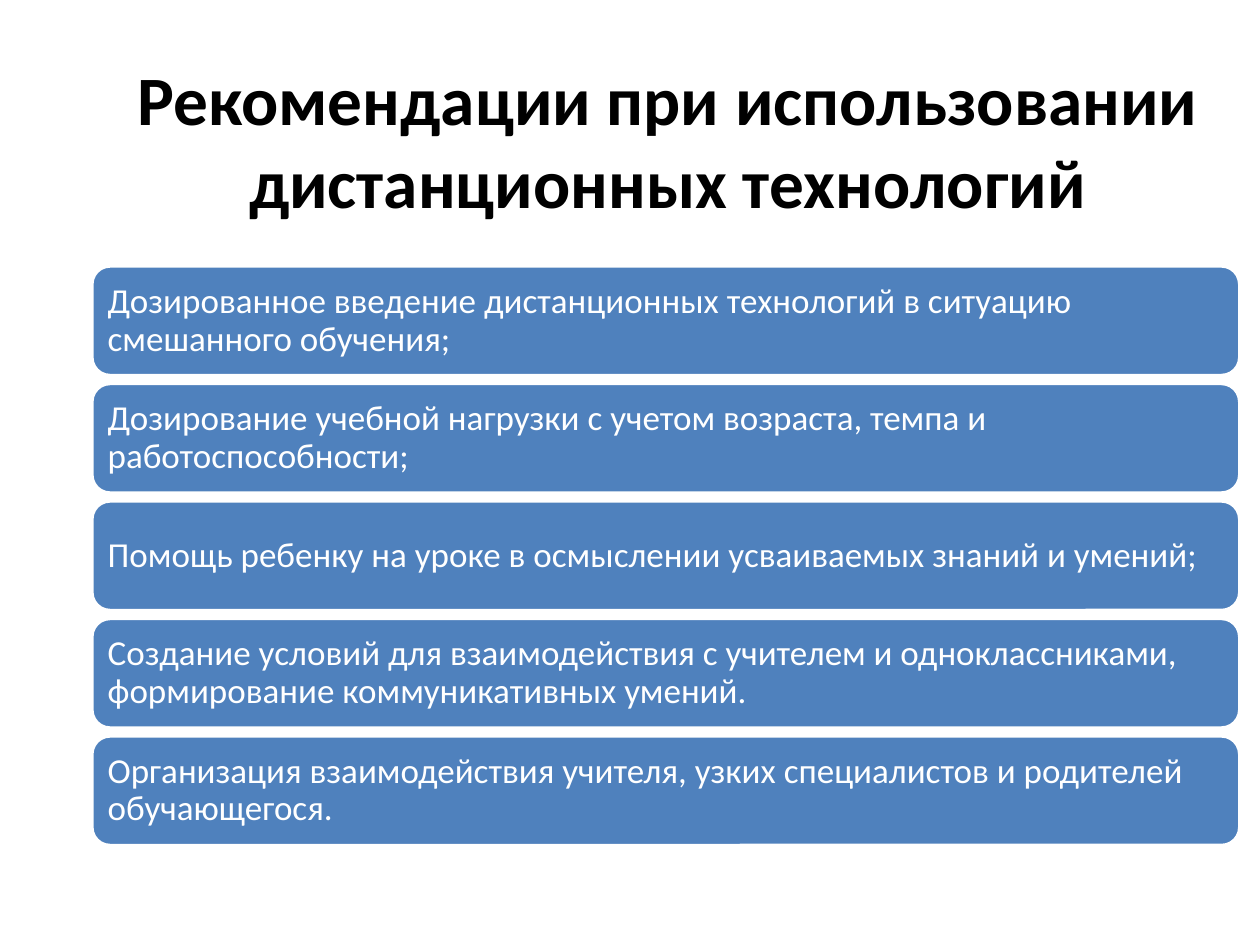
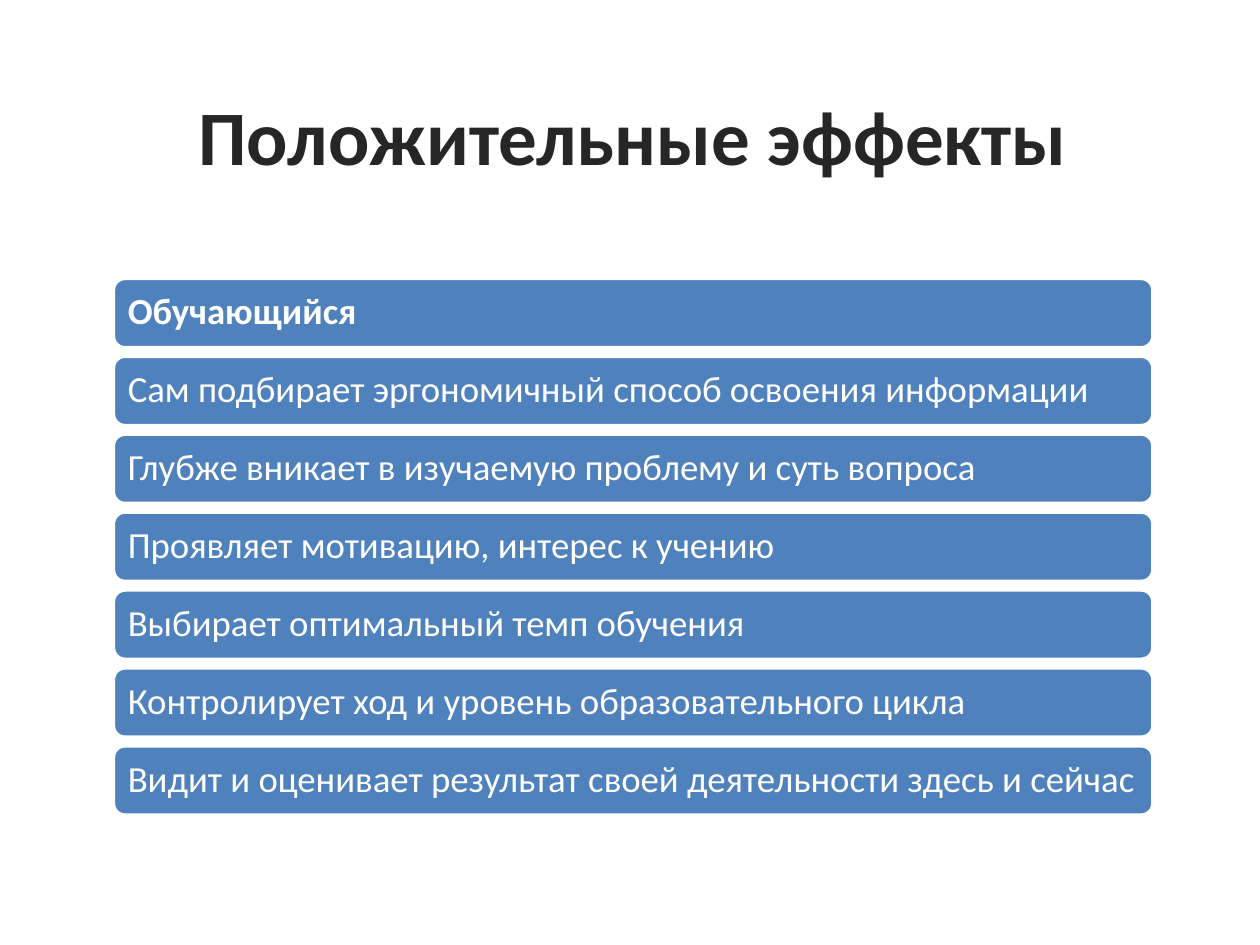
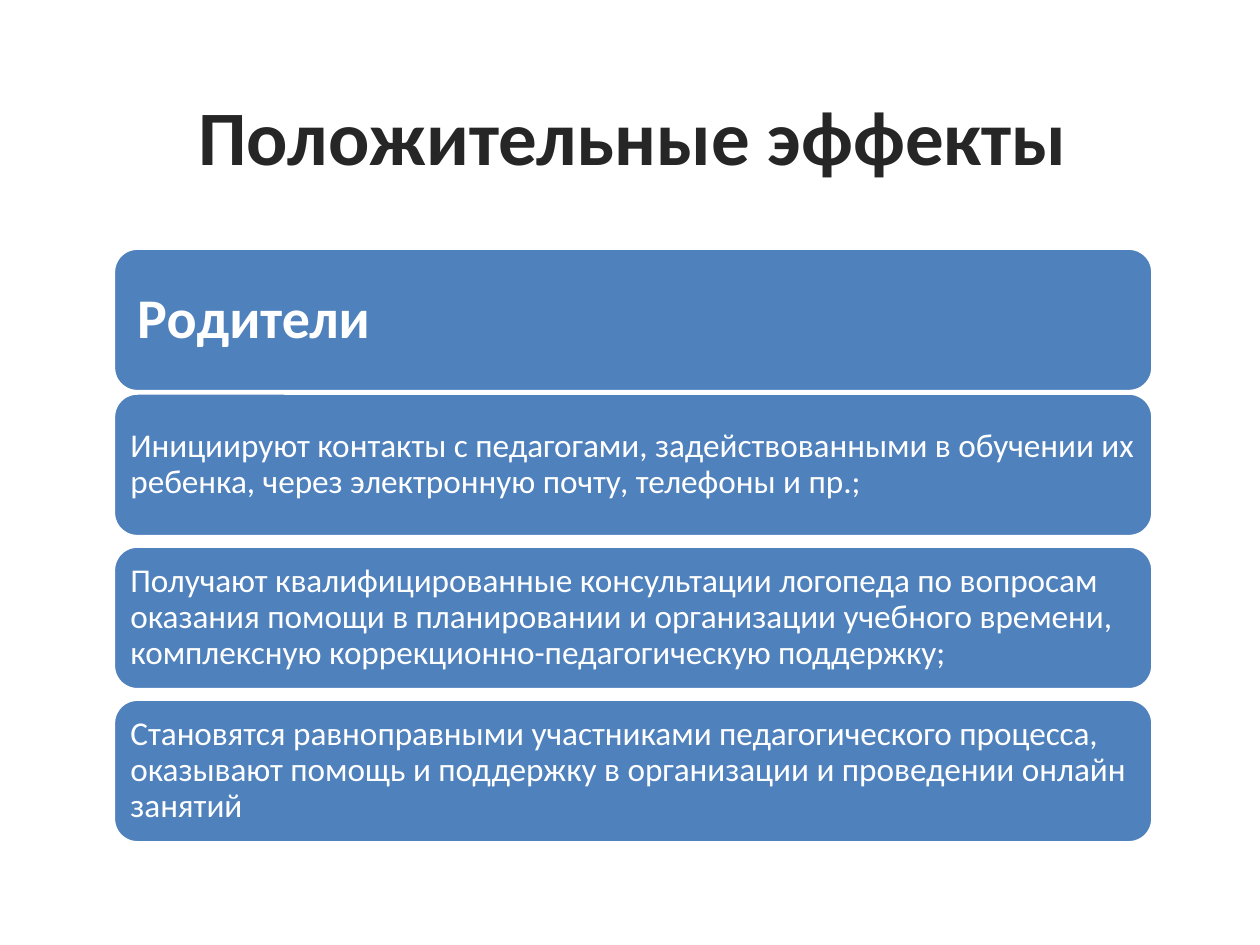
from dataclasses import dataclass

from pptx import Presentation
from pptx.dml.color import RGBColor as Rgb
from pptx.enum import shapes as sh, text as tx
from pptx.util import Pt


@dataclass(frozen=True)
class Theme:
    """Colours, font and type sizes of the deck."""
    font: str = "Calibri"
    black: str = "000000"
    dark: str = "262626"
    white: str = "FFFFFF"
    blue: str = "4F81BD"
    edge: float = 2
    lead: float = 0.9
    pad: float = 0.3
    long: float = 39.6
    head: float = 44
    group: float = 32
    tip: float = 20
    gain: float = 21
    role: float = 19


T = Theme()
TOP = (64.8, 19.5, 594, 114.5)

TIPS = [
    "Дозированное введение дистанционных технологий в ситуацию смешанного обучения;",
    "Дозирование учебной нагрузки с учетом возраста, темпа и работоспособности;",
    "Помощь ребенку на уроке в осмыслении усваиваемых знаний и умений;",
    "Создание условий для взаимодействия с учителем и одноклассниками, "
    "формирование коммуникативных умений.",
    "Организация взаимодействия учителя, узких специалистов и родителей обучающегося.",
]
PUPIL = [
    "Обучающийся",
    "Сам подбирает эргономичный способ освоения информации",
    "Глубже вникает в изучаемую проблему и суть вопроса",
    "Проявляет мотивацию, интерес к учению",
    "Выбирает оптимальный темп обучения",
    "Контролирует ход и уровень образовательного цикла",
    "Видит и оценивает результат своей деятельности здесь и сейчас",
]
HOME = [
    "Инициируют контакты с педагогами, задействованными в обучении их ребенка, "
    "через электронную почту, телефоны и пр.;",
    "Получают квалифицированные консультации логопеда по вопросам оказания помощи "
    "в планировании и организации учебного времени, "
    "комплексную коррекционно-педагогическую поддержку;",
    "Становятся равноправными участниками педагогического процесса, оказывают помощь "
    "и поддержку в организации и проведении онлайн занятий",
]


def style(frame, words, size, color, align, bold=False):
    """Fill a text frame with one formatted paragraph."""
    frame.text = words
    frame.word_wrap = True
    frame.auto_size = tx.MSO_AUTO_SIZE.NONE
    frame.vertical_anchor = tx.MSO_ANCHOR.MIDDLE
    para = frame.paragraphs[0]
    para.alignment = align
    for run in para.runs:
        run.font.name = T.font
        run.font.size = Pt(size)
        run.font.bold = bold
        run.font.color.rgb = Rgb.from_string(color)


def start(deck, words, box=TOP, size=T.head, color=T.dark):
    """Add a slide with its title placed in the box."""
    slide = deck.slides.add_slide(deck.slide_layouts[5])
    title = slide.shapes.title
    title.left, title.top, title.width, title.height = map(Pt, box)
    style(title.text_frame, words, size, color, tx.PP_ALIGN.CENTER, True)
    return slide


def bar(slide, box, words, size, bold=False):
    """Draw one rounded bar with left-aligned text."""
    shape = slide.shapes.add_shape(sh.MSO_SHAPE.ROUNDED_RECTANGLE, *map(Pt, box))
    shape.shadow.inherit = False
    shape.fill.solid()
    shape.fill.fore_color.rgb = Rgb.from_string(T.blue)
    shape.line.color.rgb = Rgb.from_string(T.white)
    shape.line.width = Pt(T.edge)
    frame = shape.text_frame
    style(frame, words, size, T.white, tx.PP_ALIGN.LEFT, bold)
    frame.paragraphs[0].line_spacing = T.lead
    inset = Pt(size * T.pad)
    frame.margin_left = frame.margin_right = inset
    frame.margin_top = frame.margin_bottom = inset


def stack(slide, box, items, size, gap, lead=False):
    """Share the box among equal bars; lead makes the first one bold."""
    left, top, width, height = box
    tall = (height - gap * (len(items) - 1)) / len(items)
    for i, words in enumerate(items):
        spot = (left, top + i * (tall + gap), width, tall)
        bar(slide, spot, words, size, lead and i == 0)


def main():
    """Build the three slides and save the deck."""
    deck = Presentation()
    deck.slide_width, deck.slide_height = Pt(720), Pt(540)

    slide = start(deck, "Рекомендации при использовании дистанционных технологий",
                  (64.8, 22.3, 633.6, 114.5), T.long, T.black)
    stack(slide, (52.5, 152, 656, 331.2), TIPS, T.tip, 4.5)

    effect = "Положительные эффекты"
    slide = start(deck, effect)
    stack(slide, (64.8, 159.1, 594, 306.7), PUPIL, T.gain, 4.9, True)

    slide = start(deck, effect)
    bar(slide, (64.8, 141.8, 594, 82), "Родители", T.group, True)
    stack(slide, (64.8, 224.6, 594, 257), HOME, T.role, 5.4)

    deck.save("out.pptx")


if __name__ == "__main__":
    main()
